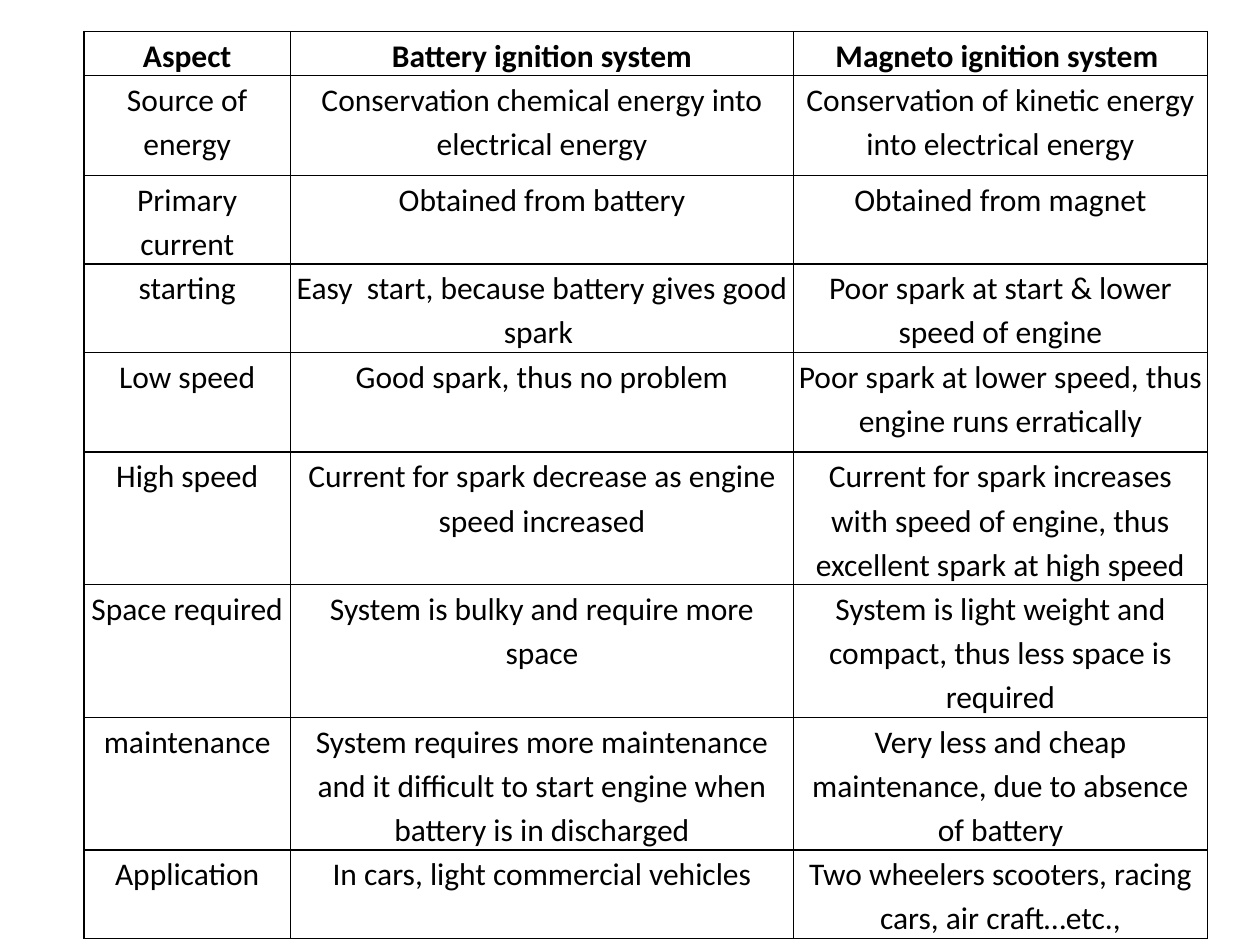
from dataclasses import dataclass

from lxml.etree import SubElement
from pptx import Presentation
from pptx.dml.color import RGBColor
from pptx.enum.text import PP_ALIGN
from pptx.oxml.ns import qn
from pptx.slide import Slide
from pptx.util import Pt

COLUMN_WIDTHS = [118, 287.5, 236.5]
ROW_HEIGHTS = [19, 57, 38, 38, 57, 75.5, 57, 75.5, 38]
COMPARISON = [
    ("Aspect", "Battery ignition system", "Magneto ignition system "),
    ("Source of\nenergy", "Conservation chemical energy into electrical energy",
     "Conservation of kinetic energy into electrical energy"),
    ("Primary current", "Obtained from battery", "Obtained from magnet"),
    ("starting", "Easy  start, because battery gives good spark ",
     "Poor spark at start & lower speed of engine"),
    ("Low speed", "Good spark, thus no problem",
     "Poor spark at lower speed, thus engine runs erratically"),
    ("High speed", "Current for spark decrease as engine speed increased",
     "Current for spark increases with speed of engine, thus excellent spark at high speed"),
    ("Space required", "System is bulky and require more space",
     "System is light weight and compact, thus less space is required"),
    ("maintenance",
     "System requires more maintenance and it difficult to start engine when battery is in discharged",
     "Very less and cheap maintenance, due to absence of battery"),
    ("Application", "In cars, light commercial vehicles",
     "Two wheelers scooters, racing cars, air craft…etc.,"),
]


def color(value):
    return RGBColor.from_string(value)


@dataclass
class SlideBuilder:
    """Draws styled elements on the current slide."""

    slide: Slide
    font_name: str = "Calibri"
    font_size: float = 18
    ink: str = "000000"
    line_spacing: float = 1.15
    side_margin: float = 3
    border_width: float = 1

    def table(self, left, top, height, column_widths, row_heights, rows):
        frame = self.slide.shapes.add_table(
            len(rows), len(column_widths), Pt(left), Pt(top),
            Pt(sum(column_widths)), Pt(height))
        table = frame.table
        table.horz_banding = False
        for column, width in zip(table.columns, column_widths):
            column.width = Pt(width)
        for row, row_height, texts in zip(table.rows, row_heights, rows):
            row.height = Pt(row_height)
            for cell, text in zip(row.cells, texts):
                self.cell(cell, text, bold=texts is rows[0])
        frame.height = Pt(height)

    def cell(self, cell, text, bold):
        cell.margin_left = cell.margin_right = Pt(self.side_margin)
        cell.margin_top = cell.margin_bottom = 0
        self.borders(cell)
        cell.fill.background()
        cell.text_frame.text = text
        for paragraph in cell.text_frame.paragraphs:
            paragraph.alignment = PP_ALIGN.CENTER
            paragraph.line_spacing = self.line_spacing
            paragraph.font.name = self.font_name
            paragraph.font.size = Pt(self.font_size)
            paragraph.font.bold = bold
            paragraph.font.color.rgb = color(self.ink)

    def borders(self, cell):
        properties = cell._tc.get_or_add_tcPr()
        for side in ("lnL", "lnR", "lnT", "lnB"):
            line = SubElement(properties, qn(f"a:{side}"), w=str(Pt(self.border_width)))
            fill = SubElement(line, qn("a:solidFill"))
            SubElement(fill, qn("a:srgbClr"), val=self.ink)


def main():
    presentation = Presentation()
    presentation.slide_width = Pt(720)
    presentation.slide_height = Pt(540)
    slide = presentation.slides.add_slide(presentation.slide_layouts[6])
    builder = SlideBuilder(slide)
    builder.table(48, 18, 514, COLUMN_WIDTHS, ROW_HEIGHTS, COMPARISON)
    presentation.save("out.pptx")


if __name__ == "__main__":
    main()
